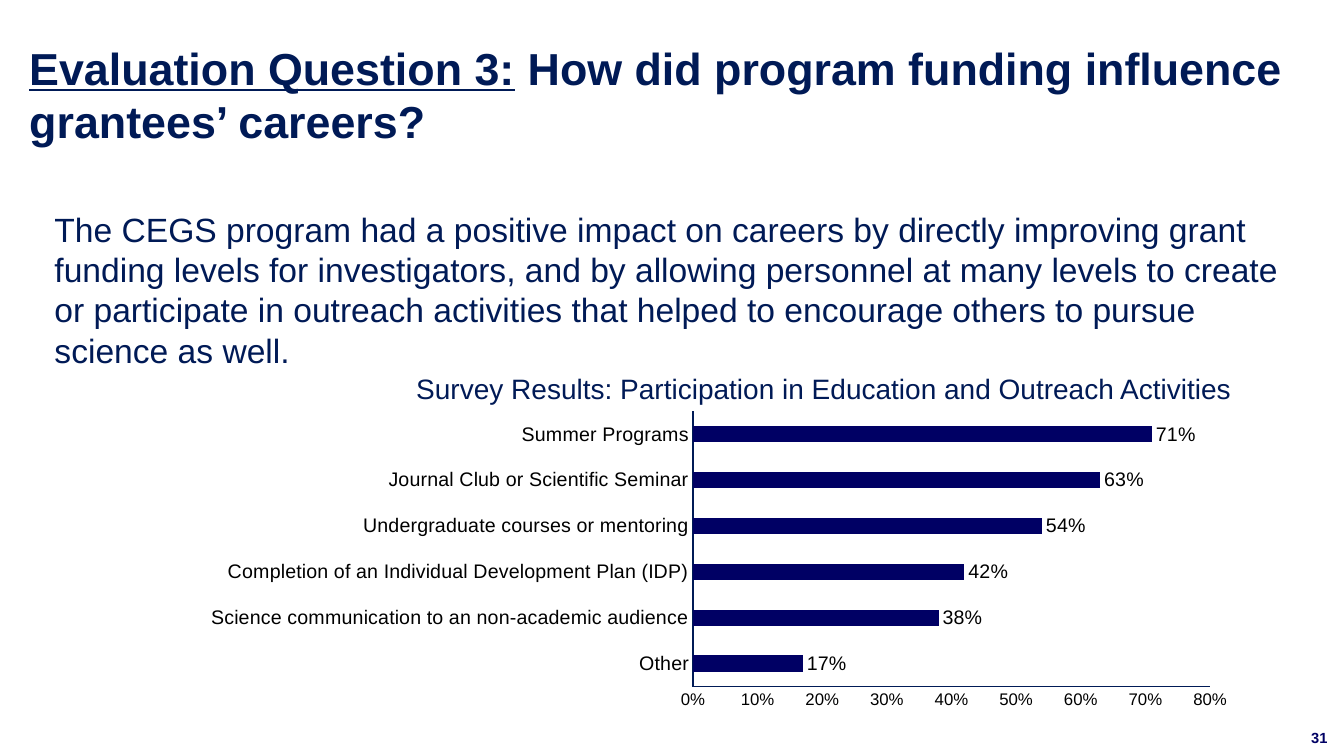
from dataclasses import dataclass

from lxml import etree
from pptx import Presentation
from pptx.chart.data import CategoryChartData
from pptx.dml.color import RGBColor
from pptx.enum.chart import XL_CHART_TYPE as ChartType
from pptx.enum.chart import XL_LABEL_POSITION as LabelPos
from pptx.enum.chart import XL_TICK_MARK as Tick
from pptx.enum.text import MSO_ANCHOR as Anchor
from pptx.enum.text import MSO_AUTO_SIZE as AutoSize
from pptx.enum.text import PP_ALIGN as Align
from pptx.oxml import parse_xml
from pptx.oxml.ns import nsdecls, qn
from pptx.util import Pt


@dataclass(frozen=True)
class Theme:
    font: str = "Arial"
    navy: RGBColor = RGBColor(0x00, 0x1A, 0x56)
    bar: RGBColor = RGBColor(0x00, 0x00, 0x64)
    black: RGBColor = RGBColor(0x00, 0x00, 0x00)
    title: float = 32
    body: float = 24
    caption: float = 20
    label: float = 14
    scale: float = 12
    number: float = 10.5


theme = Theme()


def style(font, size, color, bold=False):
    font.name = theme.font
    font.size = Pt(size)
    font.color.rgb = color
    font.bold = bold


def place(sp, left, top, width, height, anchor=Anchor.TOP):
    sp.left, sp.top, sp.width, sp.height = Pt(left), Pt(top), Pt(width), Pt(height)
    tf = sp.text_frame
    tf.word_wrap = True
    tf.auto_size = AutoSize.NONE
    tf.vertical_anchor = anchor
    return tf


prs = Presentation()
prs.slide_width, prs.slide_height = Pt(960), Pt(540)
s = prs.slides.add_slide(prs.slide_layouts[1])

tf = place(s.shapes.title, 13.7, 25.2, 943.2, 85)
p = tf.paragraphs[0]
p.alignment = Align.LEFT
for text, underline in (
    ("Evaluation Question 3:", True),
    (" How did program funding influence grantees’ careers?", False),
):
    r = p.add_run()
    r.text = text
    style(r.font, theme.title, theme.navy, bold=True)
    r.font.underline = underline

tf = place(s.placeholders[1], 31.7, 145.4, 897.8, 123.8)
tf.text = (
    "The CEGS program had a positive impact on careers by directly improving grant "
    "funding levels for investigators, and by allowing personnel at many levels to "
    "create or participate in outreach activities that helped to encourage others to "
    "pursue science as well."
)
p = tf.paragraphs[0]
p.space_before = Pt(0)
pPr = p._p.get_or_add_pPr()
pPr.set("marL", "0")
pPr.set("indent", "0")
etree.SubElement(pPr, qn("a:buNone"))
style(p.runs[0].font, theme.body, theme.navy)

data = CategoryChartData(number_format="0%")
data.categories = [
    "Other",
    "Science communication to an non-academic audience",
    "Completion of an Individual Development Plan (IDP)",
    "Undergraduate courses or mentoring",
    "Journal Club or Scientific Seminar",
    "Summer Programs",
]
data.add_series("Series 1", (0.17, 0.38, 0.42, 0.54, 0.63, 0.71))
chart = s.shapes.add_chart(
    ChartType.BAR_CLUSTERED, Pt(133.2), Pt(289.4), Pt(753.8), Pt(221), data
).chart
chart.has_legend = False
chart.has_title = False
style(chart.font, theme.scale, theme.black)

for axis, size in (
    (chart.category_axis, theme.label),
    (chart.value_axis, theme.scale),
):
    axis.has_major_gridlines = False
    axis.major_tick_mark = axis.minor_tick_mark = Tick.NONE
    axis.format.line.color.rgb = theme.navy
    axis.format.line.width = Pt(0.75)
    style(axis.tick_labels.font, size, theme.black)

scale = chart.value_axis
scale.minimum_scale, scale.maximum_scale, scale.major_unit = 0, 0.8, 0.1
scale.tick_labels.number_format = "0%"
scale.tick_labels.number_format_is_linked = False

plot = chart.plots[0]
plot.gap_width = 182
plot.vary_by_categories = False
fill = plot.series[0].format.fill
fill.solid()
fill.fore_color.rgb = theme.bar
plot.has_data_labels = True
labels = plot.data_labels
labels.show_value = True
labels.position = LabelPos.OUTSIDE_END
labels.number_format = "0%"
labels.number_format_is_linked = False
style(labels.font, theme.label, theme.black)

area = chart._chartSpace.chart.plotArea
for old in area.findall(qn("c:layout")):
    area.remove(old)
frame = "".join(
    f'<c:{tag} val="{val}"/>'
    for tag, val in (
        ("layoutTarget", "inner"), ("xMode", "edge"), ("yMode", "edge"),
        ("x", 0.48), ("y", 0.02), ("w", 0.49), ("h", 0.89),
    )
)
area.insert(0, parse_xml(
    f'<c:layout {nsdecls("c")}><c:manualLayout>{frame}</c:manualLayout></c:layout>'
))

for text, box, anchor, size, color, bold in (
    ("Survey Results: Participation in Education and Outreach Activities",
     (290.2, 262.1, 618.5, 31.7), Anchor.TOP, theme.caption, theme.navy, False),
    ("31", (929.5, 512.6, 27.4, 28.8), Anchor.MIDDLE, theme.number, theme.bar, True),
):
    tf = place(s.shapes.add_textbox(0, 0, 0, 0), *box, anchor)
    tf.text = text
    style(tf.paragraphs[0].runs[0].font, size, color, bold)

prs.save("out.pptx")
